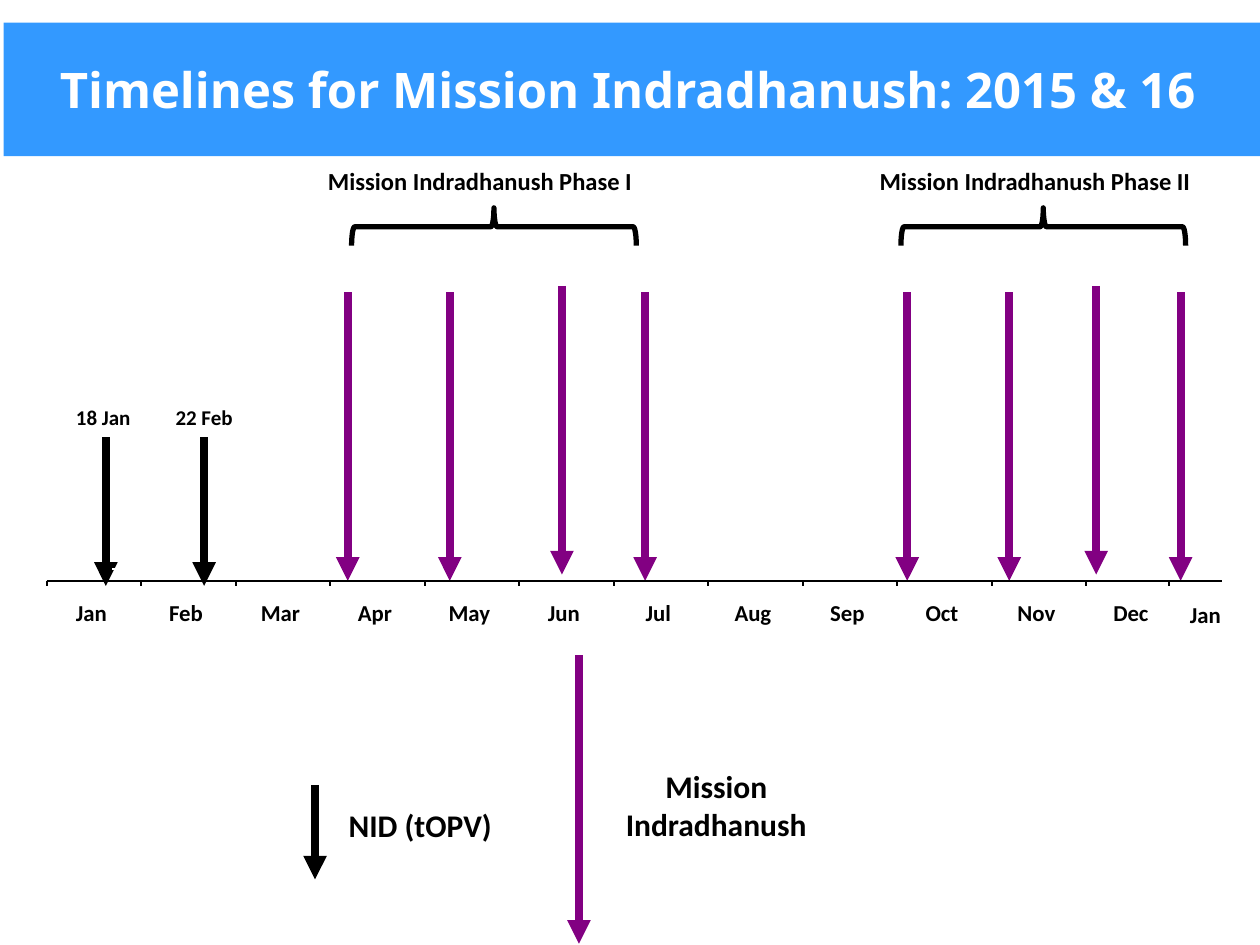
from collections import namedtuple

from lxml.etree import SubElement
from pptx import Presentation
from pptx.dml.color import RGBColor
from pptx.enum.shapes import MSO_CONNECTOR as Connector, MSO_SHAPE as Shape
from pptx.enum.text import MSO_ANCHOR as Anchor, PP_ALIGN as Align
from pptx.oxml.ns import qn
from pptx.util import Inches, Pt

COLUMNS, ROWS = 100, 75
UNIT = Inches(0.1)
BLACK, WHITE, PURPLE, BLUE = "000000", "FFFFFF", "820082", "3399FF"
MONTHS = "Jan Feb Mar Apr May Jun Jul Aug Sep Oct Nov Dec".split()
MONTH_STEP, LAST_TICK = 7.5, 89.1
MISSION_LENGTH = 22.9

Box = namedtuple("Box", "left top width height")


def color(value):
    return RGBColor.from_string(value)


def grid(*lengths):
    return [round(length * UNIT) for length in lengths]


def write(frame, text, size, font="Calibri", ink=BLACK):
    para = frame.paragraphs[0]
    para.text = text
    para.alignment = Align.CENTER
    para.font.name = font
    para.font.size = Pt(size)
    para.font.bold = True
    para.font.color.rgb = color(ink)


def add_label(page, box, text, size, anchor=Anchor.TOP, inset=True):
    frame = page.shapes.add_textbox(*grid(*box)).text_frame
    frame.word_wrap = True
    frame.vertical_anchor = anchor
    if not inset:
        frame.margin_left = frame.margin_right = 0
        frame.margin_top = frame.margin_bottom = 0
    write(frame, text, size)


def add_line(page, start, end, ink=BLACK, weight=1.13, arrow=False):
    line = page.shapes.add_connector(Connector.STRAIGHT, *grid(*start, *end))
    line.line.color.rgb = color(ink)
    line.line.width = Pt(weight)
    if arrow:
        outline = line._element.spPr.find(qn("a:ln"))
        SubElement(outline, qn("a:tailEnd"), type="triangle")
    SubElement(line._element.spPr, qn("a:effectLst"))


def add_arrow(page, x, top, length, ink):
    add_line(page, (x, top), (x, top + length), ink, 4.5, arrow=True)


def add_title(page, box):
    banner = page.shapes.add_shape(Shape.RECTANGLE, *grid(*box))
    banner.shadow.inherit = False
    banner.fill.solid()
    banner.fill.fore_color.rgb = color(BLUE)
    banner.line.fill.background()
    banner.text_frame.word_wrap = True
    banner.text_frame.vertical_anchor = Anchor.MIDDLE
    write(banner.text_frame, "Timelines for Mission Indradhanush: 2015 & 16 ", 28, "Noto Sans", WHITE)


def add_axis(page, box):
    right = box.left + box.width
    add_line(page, (box.left, box.top), (right, box.top))
    ticks = [box.left + MONTH_STEP * index for index in range(len(MONTHS))]
    for x in ticks + [box.left + LAST_TICK]:
        add_line(page, (x, box.top + 0.4), (x, box.top))
    for x, month in zip(ticks, MONTHS):
        add_label(page, Box(x + 1.3, box.top + 1.4, 4.5, 2.2), month, 13, inset=False)
    add_label(page, Box(right - 3.6, box.top + 1.6, 4.5, 2.2), MONTHS[0], 13, inset=False)


def add_immunization_day(page, box, text, arrow_offset):
    add_label(page, Box(box.left, box.top, box.width, 2.9), text, 12)
    add_arrow(page, box.left + arrow_offset, box.top + 3.1, box.height - 3.1, BLACK)


def add_phase(page, box, text, arrow_offsets):
    add_label(page, Box(box.left, box.top, box.width, 3.9), text, 14)
    depth, span = 3, 22.6
    center_x, center_y = box.left + 2.9 + span / 2, box.top + 5.3
    brace = page.shapes.add_shape(
        Shape.LEFT_BRACE, *grid(center_x - depth / 2, center_y - span / 2, depth, span))
    brace.rotation = 90
    brace.shadow.inherit = False
    brace.fill.background()
    brace.line.color.rgb = color(BLACK)
    brace.line.width = Pt(3)
    start = box.top + box.height - MISSION_LENGTH
    for offset, lift in zip(arrow_offsets, (0, 0, 0.5, 0)):
        add_arrow(page, box.left + offset, start - lift, MISSION_LENGTH, PURPLE)


def add_legend(page, box):
    add_arrow(page, box.left, box.top + 10.3, 7.5, BLACK)
    add_label(page, Box(box.left + 1.35, box.top + 11.9, 14, 3.1), "NID (tOPV)", 18, Anchor.MIDDLE)
    add_arrow(page, box.left + 20.95, box.top, box.height, PURPLE)
    add_label(page, Box(box.left + 22.5, box.top + 10.3, 18.7, 3.1), "Mission Indradhanush", 18,
              Anchor.MIDDLE)


def main():
    deck = Presentation()
    deck.slide_width, deck.slide_height = grid(COLUMNS, ROWS)
    page = deck.slides.add_slide(deck.slide_layouts[6])
    add_title(page, Box(0.3, 1.8, COLUMNS, 10.6))
    add_immunization_day(page, Box(4.6, 31.6, 7.2, 14.9), "18 Jan", 3.8)
    add_immunization_day(page, Box(12.4, 31.6, 7.6, 14.9), "22 Feb", 3.8)
    add_phase(page, Box(25, 12.7, 26.2, 33.4), "Mission Indradhanush Phase I", (2.6, 10.7, 19.6, 26.2))
    add_phase(page, Box(68.6, 12.7, 27.1, 33.4), "Mission Indradhanush Phase II", (3.4, 11.5, 18.4, 25.1))
    add_line(page, (8.9, 45.2), (9.6, 45.2), WHITE)
    add_axis(page, Box(3.7, 46.1, 93.3, 4))
    add_legend(page, Box(25, 52, 41.2, MISSION_LENGTH))
    deck.save("out.pptx")


if __name__ == "__main__":
    main()
